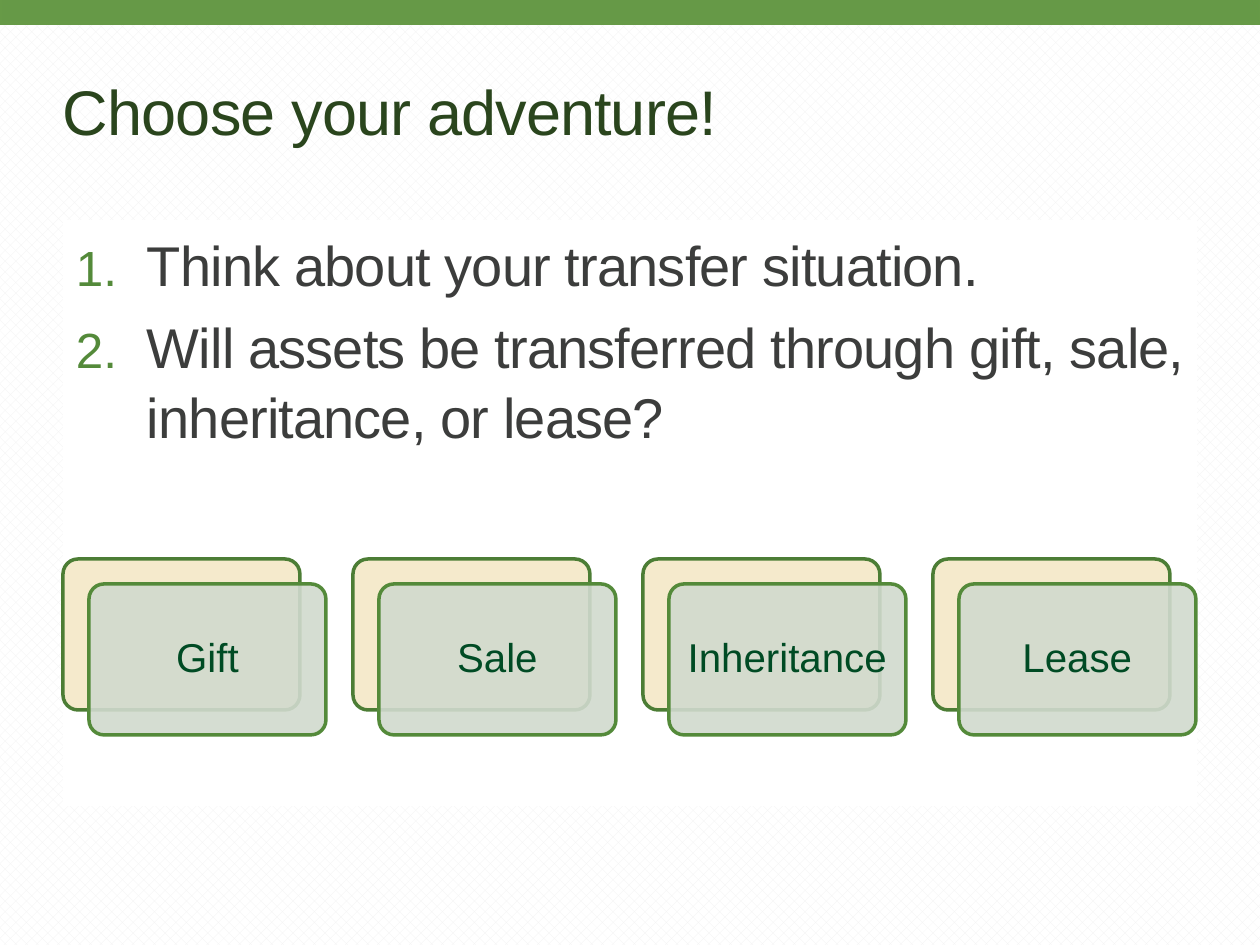
from dataclasses import dataclass

from lxml.etree import SubElement
from pptx import Presentation
from pptx.dml.color import RGBColor
from pptx.enum.dml import MSO_PATTERN
from pptx.enum.shapes import MSO_SHAPE
from pptx.enum.text import MSO_ANCHOR, PP_ALIGN
from pptx.oxml.ns import qn
from pptx.util import Pt

PX = 914400 // 126
FONT = "Arial"
CHOICES = ["Gift", "Sale", "Inheritance", "Lease"]
STEPS = [
    "Think about your transfer situation.",
    "Will assets be transferred through gift, sale, inheritance, or lease?",
]
CARD_LEFT, CARD_TOP, CARD_PITCH = 63, 559, 290
CARD_WIDTH, CARD_HEIGHT = 237, 151
FRONT_SHIFT_X, FRONT_SHIFT_Y = 26, 25


@dataclass(frozen=True)
class Box:
    left: int
    top: int
    width: int
    height: int

    def emu(self) -> list[int]:
        return [n * PX for n in (self.left, self.top, self.width, self.height)]


@dataclass(frozen=True)
class TextStyle:
    size: int
    color: str
    spacing: int = 0


TITLE = TextStyle(36, "2A451D", -50)
STEP = TextStyle(32, "3C3D3C", -50)
CHOICE = TextStyle(23, "004B24")


def rgb(value: str) -> RGBColor:
    return RGBColor.from_string(value)


def apply_format(target, values: dict) -> None:
    for name, value in values.items():
        setattr(target, name, value)


def draw_shape(slide, kind, box: Box, fill: str, line: str = "", opacity: int = 100):
    shape = slide.shapes.add_shape(kind, *box.emu())
    shape.shadow.inherit = False
    shape.fill.solid()
    shape.fill.fore_color.rgb = rgb(fill)
    if opacity < 100:
        tint = shape.fill._xPr.find(qn("a:solidFill"))[0]
        SubElement(tint, qn("a:alpha"), val=str(opacity * 1000))
    if line:
        shape.line.color.rgb = rgb(line)
        shape.line.width = Pt(2)
    else:
        shape.line.fill.background()
    if kind == MSO_SHAPE.ROUNDED_RECTANGLE:
        shape.adjustments[0] = 0.1
    return shape


def set_frame(frame, anchor, margins: tuple[int, int, int, int]) -> None:
    left, top, right, bottom = (n * PX for n in margins)
    apply_format(frame, {
        "word_wrap": True, "vertical_anchor": anchor,
        "margin_left": left, "margin_top": top,
        "margin_right": right, "margin_bottom": bottom,
    })


def write(paragraph, text: str, style: TextStyle, align=PP_ALIGN.LEFT) -> None:
    paragraph.alignment = align
    run = paragraph.add_run()
    run.text = text
    apply_format(run.font, {"name": FONT, "size": Pt(style.size)})
    run.font.color.rgb = rgb(style.color)
    if style.spacing:
        run._r.get_or_add_rPr().set("spc", str(style.spacing))


def number_paragraph(paragraph, color: str, indent: int) -> None:
    properties = paragraph._p.get_or_add_pPr()
    properties.set("marL", str(indent * PX))
    properties.set("indent", str(-indent * PX))
    bullet_color = SubElement(properties, qn("a:buClr"))
    SubElement(bullet_color, qn("a:srgbClr"), val=color)
    SubElement(properties, qn("a:buSzPct"), val="88000")
    SubElement(properties, qn("a:buFont"), typeface=FONT)
    SubElement(properties, qn("a:buAutoNum"), type="arabicPeriod")


def draw_title(slide) -> None:
    title = slide.shapes.add_textbox(*Box(63, 45, 1134, 130).emu()).text_frame
    set_frame(title, MSO_ANCHOR.MIDDLE, (0, 0, 0, 0))
    write(title.paragraphs[0], "Choose your adventure!", TITLE)


def draw_steps(slide) -> None:
    panel = draw_shape(slide, MSO_SHAPE.RECTANGLE, Box(63, 220, 1134, 586), "FFFFFF")
    frame = panel.text_frame
    set_frame(frame, MSO_ANCHOR.TOP, (13, 8, 11, 6))
    for index, step in enumerate(STEPS):
        paragraph = frame.add_paragraph() if index else frame.paragraphs[0]
        number_paragraph(paragraph, "548A3A", 71)
        paragraph.line_spacing = 1.04
        if index:
            paragraph.space_before = Pt(7)
        write(paragraph, step, STEP)


def draw_choice(slide, label: str, left: int) -> None:
    back = Box(left, CARD_TOP, CARD_WIDTH, CARD_HEIGHT)
    front = Box(left + FRONT_SHIFT_X, CARD_TOP + FRONT_SHIFT_Y, CARD_WIDTH, CARD_HEIGHT)
    draw_shape(slide, MSO_SHAPE.ROUNDED_RECTANGLE, back, "F5EACC", "4C7D35")
    card = draw_shape(slide, MSO_SHAPE.ROUNDED_RECTANGLE, front, "D1DACE", "548A3A", 90)
    set_frame(card.text_frame, MSO_ANCHOR.MIDDLE, (12, 12, 12, 12))
    paragraph = card.text_frame.paragraphs[0]
    paragraph.line_spacing = 0.9
    write(paragraph, label, CHOICE, PP_ALIGN.CENTER)


def main() -> None:
    deck = Presentation()
    apply_format(deck, {"slide_width": 1260 * PX, "slide_height": 945 * PX})
    slide = deck.slides.add_slide(deck.slide_layouts[6])
    backdrop = slide.background.fill
    backdrop.patterned()
    backdrop.pattern = MSO_PATTERN.from_xml("pct40")
    backdrop.fore_color.rgb = rgb("F2F2F2")
    backdrop.back_color.rgb = rgb("FFFFFF")
    draw_shape(slide, MSO_SHAPE.RECTANGLE, Box(0, -2, 1261, 25), "669947", "679A47")
    draw_title(slide)
    draw_steps(slide)
    for index, label in enumerate(CHOICES):
        draw_choice(slide, label, CARD_LEFT + index * CARD_PITCH)
    deck.save("out.pptx")


if __name__ == "__main__":
    main()
